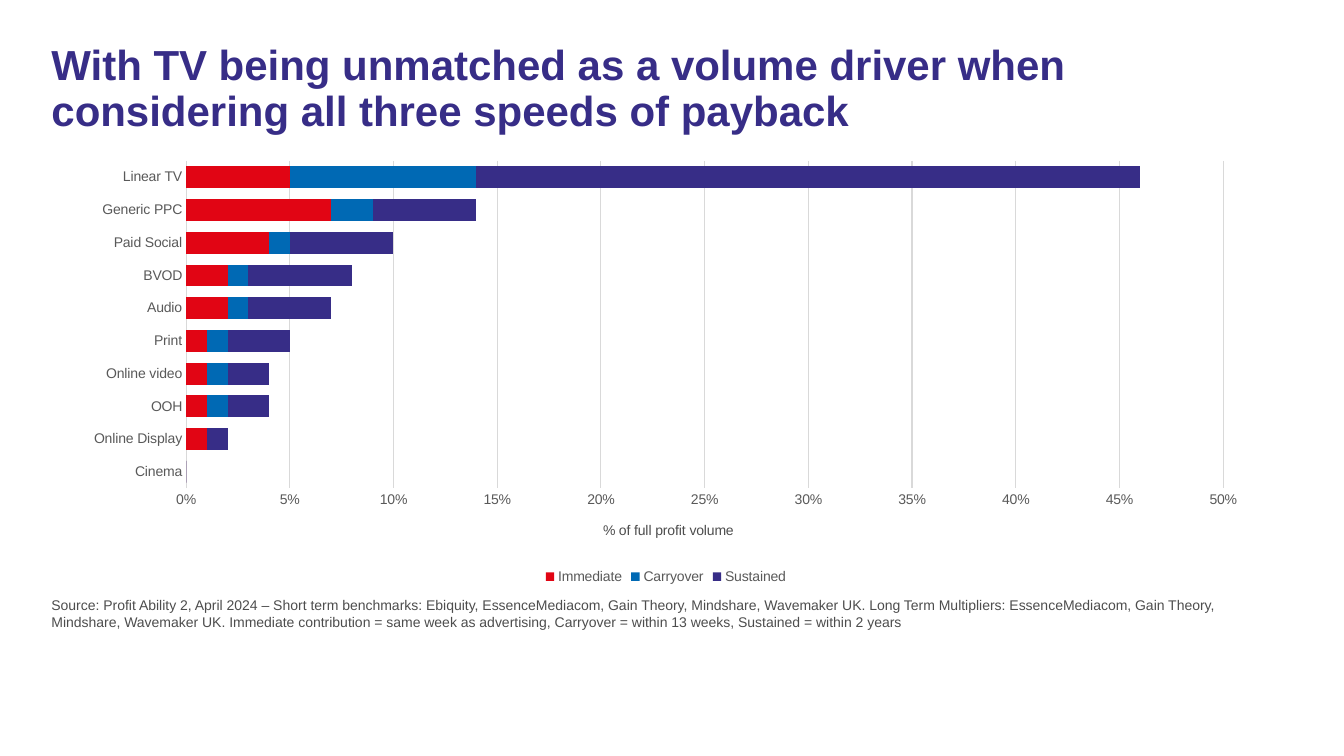
from dataclasses import dataclass

from lxml.etree import SubElement
from pptx import Presentation
from pptx.chart.data import CategoryChartData
from pptx.dml.color import RGBColor
from pptx.enum.chart import XL_CHART_TYPE as ChartType
from pptx.enum.chart import XL_LEGEND_POSITION as LegendPosition
from pptx.enum.chart import XL_TICK_MARK as TickMark
from pptx.enum.text import MSO_ANCHOR as Anchor
from pptx.enum.text import MSO_AUTO_SIZE as AutoSize
from pptx.enum.text import PP_ALIGN as Align
from pptx.oxml.ns import qn
from pptx.util import Inches, Pt


@dataclass(frozen=True)
class Theme:
    """Colours and type sizes of the slide."""
    font: str = "Arial"
    title_size: int = 30
    small_size: int = 10
    indigo: str = "372D87"
    red: str = "E10514"
    blue: str = "0069B4"
    text: str = "4D4D4D"
    label: str = "595959"
    grid: str = "D9D9D9"


THEME = Theme()

HEADLINE = ("With TV being unmatched as a volume driver when "
            "considering all three speeds of payback")
SOURCE = ("Source: Profit Ability 2, April 2024 – Short term benchmarks: Ebiquity, "
          "EssenceMediacom, Gain Theory, Mindshare, Wavemaker UK. Long Term Multipliers: "
          "EssenceMediacom, Gain Theory, Mindshare, Wavemaker UK. Immediate contribution = "
          "same week as advertising, Carryover = within 13 weeks, Sustained = within 2 years")
CHANNELS = ["Cinema", "Online Display", "OOH", "Online video", "Print",
            "Audio", "BVOD", "Paid Social", "Generic PPC", "Linear TV"]
PAYBACK = [
    ("Immediate", THEME.red, [0, 0.01, 0.01, 0.01, 0.01, 0.02, 0.02, 0.04, 0.07, 0.05]),
    ("Carryover", THEME.blue, [0, 0, 0.01, 0.01, 0.01, 0.01, 0.01, 0.01, 0.02, 0.09]),
    ("Sustained", THEME.indigo, [0, 0.01, 0.02, 0.02, 0.03, 0.04, 0.05, 0.05, 0.05, 0.32]),
]


def style_font(font, size, color, bold=False):
    """Apply the theme font with a size and colour."""
    font.name = THEME.font
    font.size = Pt(size)
    font.bold = bold
    font.color.rgb = RGBColor.from_string(color)


def style_line(line, color):
    """Give a line the thin chart weight and a colour."""
    line.color.rgb = RGBColor.from_string(color)
    line.width = Pt(0.75)


def fill_placeholder(holder, box, words, size, color, bold=False):
    """Move a placeholder to its box and set its text."""
    holder.left, holder.top, holder.width, holder.height = map(Inches, box)
    frame = holder.text_frame
    frame.text = words
    frame.word_wrap = True
    frame.auto_size = AutoSize.NONE
    frame.vertical_anchor = Anchor.TOP
    paragraph = frame.paragraphs[0]
    paragraph.alignment = Align.LEFT
    paragraph.space_before = Pt(0)
    style_font(paragraph.runs[0].font, size, color, bold)
    return paragraph


def add_headline(slide, box):
    """Place the headline in the title placeholder."""
    headline = fill_placeholder(slide.shapes.title, box, HEADLINE,
                                THEME.title_size, THEME.indigo, True)
    headline.line_spacing = 0.9


def add_source(slide, box):
    """Place the source note, without a bullet, in the body placeholder."""
    note = fill_placeholder(slide.placeholders[1], box, SOURCE,
                            THEME.small_size, THEME.text)
    properties = note._p.get_or_add_pPr()
    properties.set("marL", "0")
    properties.set("indent", "0")
    SubElement(properties, qn("a:buNone"))


def set_layout(parent, after, target=None, **fractions):
    """Fix a chart part at fractions of the chart area."""
    for old in parent.findall(qn("c:layout")):
        parent.remove(old)
    layout = SubElement(parent, qn("c:layout"))
    manual = SubElement(layout, qn("c:manualLayout"))
    if target:
        SubElement(manual, qn("c:layoutTarget")).set("val", target)
    for side in ("x", "y"):
        SubElement(manual, qn(f"c:{side}Mode")).set("val", "edge")
    for side, fraction in fractions.items():
        SubElement(manual, qn(f"c:{side}")).set("val", str(fraction))
    if after is None:
        parent.insert(0, layout)
    else:
        after.addnext(layout)


def style_axes(chart):
    """Format the channel axis, the percentage axis and its title."""
    channels, share = chart.category_axis, chart.value_axis
    for axis in (channels, share):
        axis.major_tick_mark = axis.minor_tick_mark = TickMark.NONE
        style_font(axis.tick_labels.font, THEME.small_size, THEME.label)
    style_line(channels.format.line, THEME.grid)
    share.format.line.fill.background()
    style_line(share.major_gridlines.format.line, THEME.grid)
    share.minimum_scale, share.maximum_scale, share.major_unit = 0, 0.5, 0.05
    share.tick_labels.number_format = "0%"
    share.tick_labels.number_format_is_linked = False
    caption = share.axis_title.text_frame
    caption.text = "% of full profit volume"
    style_font(caption.paragraphs[0].runs[0].font, THEME.small_size, THEME.text)
    title = share.axis_title._element
    set_layout(title, title.find(qn("c:tx")), x=0.445, y=0.84)


def add_payback_chart(slide, box):
    """Place the stacked bars of profit volume by channel."""
    data = CategoryChartData(number_format="0%")
    data.categories = CHANNELS
    for speed, _, shares in PAYBACK:
        data.add_series(speed, shares)
    chart = slide.shapes.add_chart(ChartType.BAR_STACKED, *map(Inches, box), data).chart
    chart.has_title = False
    style_font(chart.font, THEME.small_size, THEME.label)
    plot = chart.plots[0]
    plot.gap_width, plot.overlap, plot.vary_by_categories = 50, 100, False
    for series, (_, color, _) in zip(plot.series, PAYBACK):
        series.format.fill.solid()
        series.format.fill.fore_color.rgb = RGBColor.from_string(color)
    style_axes(chart)
    area = chart._chartSpace.chart.plotArea
    set_layout(area, None, "inner", x=0.097, y=0.02, w=0.871, h=0.75)
    chart.has_legend = True
    chart.legend.position = LegendPosition.BOTTOM
    chart.legend.include_in_layout = False
    style_font(chart.legend.font, THEME.small_size, THEME.label)


def main():
    """Build the slide and save it."""
    deck = Presentation()
    deck.slide_width, deck.slide_height = Inches(13.33), Inches(7.5)
    slide = deck.slides.add_slide(deck.slide_layouts[1])
    add_headline(slide, (0.41, 0.39, 12.4, 1.12))
    add_source(slide, (0.41, 5.87, 12.4, 0.33))
    add_payback_chart(slide, (0.7, 1.51, 11.81, 4.33))
    deck.save("out.pptx")


if __name__ == "__main__":
    main()
